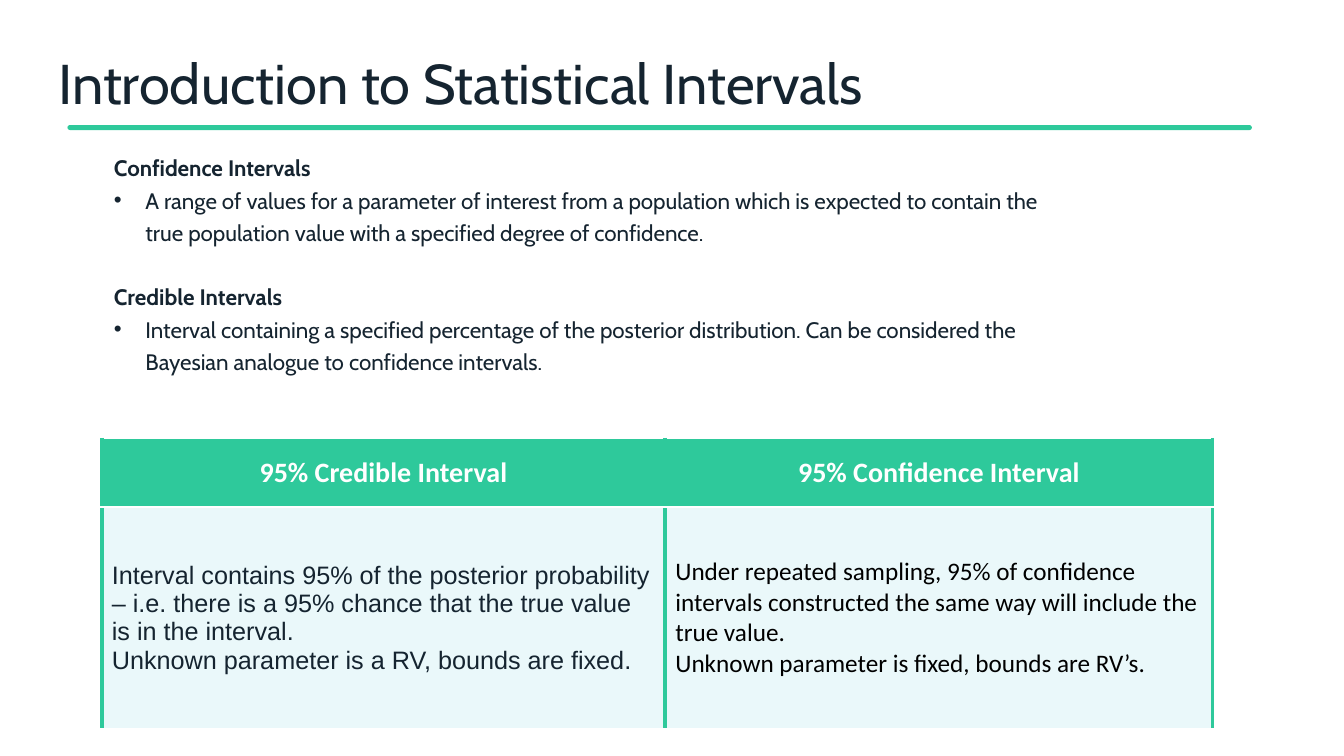
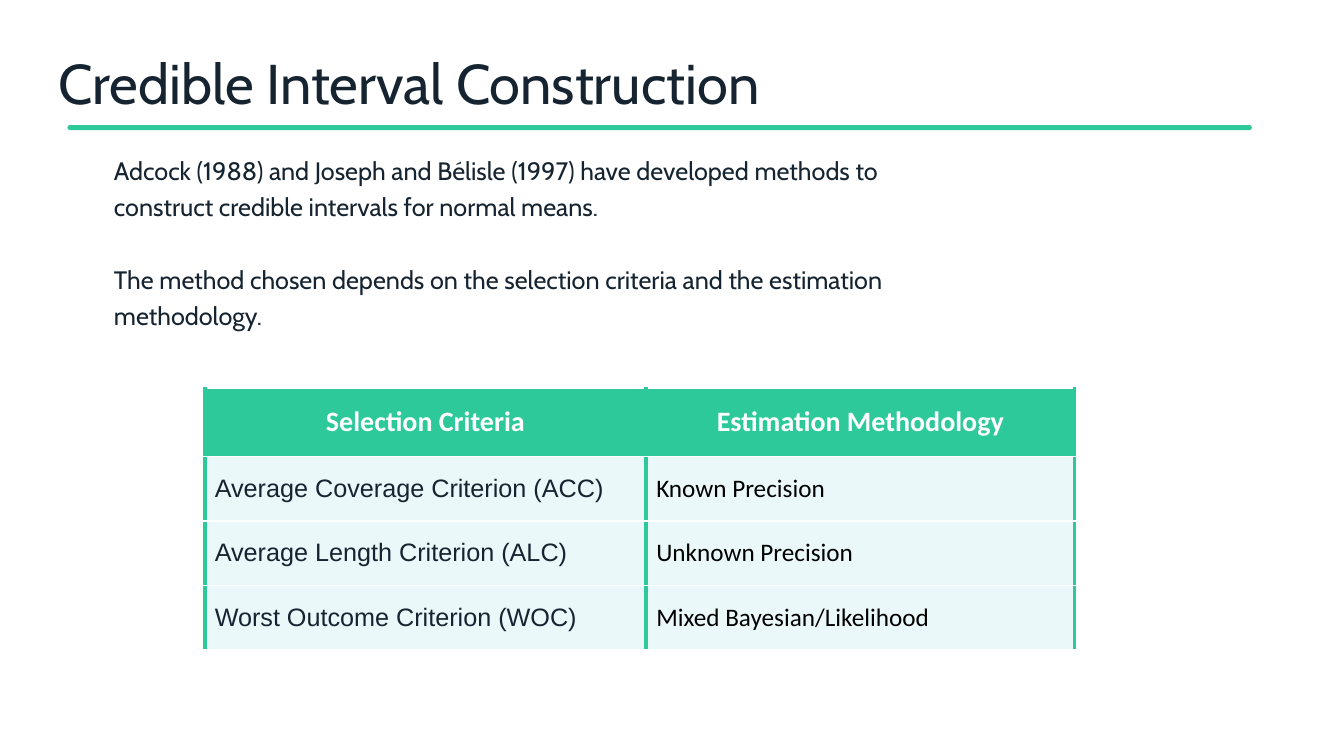
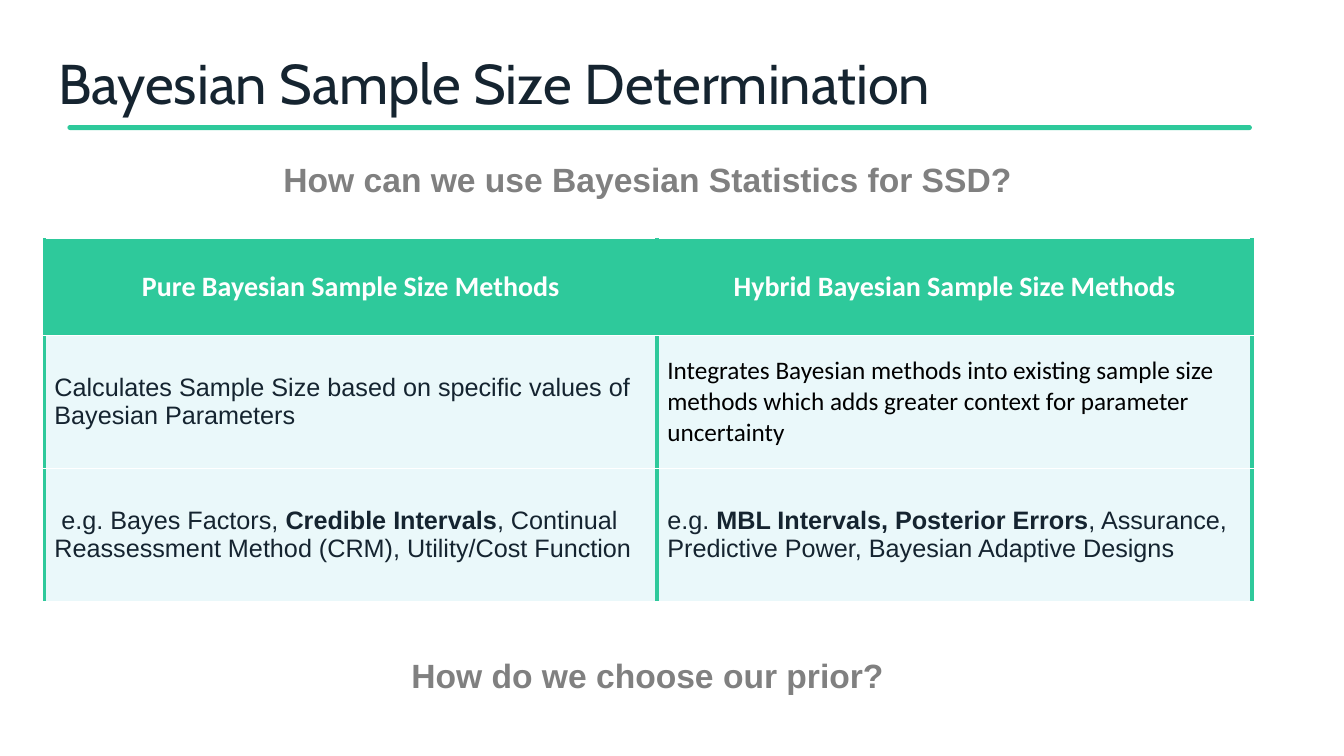
"""Build three slides on Bayesian intervals and sample size determination."""
from lxml import etree
from pptx import Presentation
from pptx.dml.color import RGBColor
from pptx.enum import shapes, text
from pptx.oxml import ns
from pptx.util import Pt

GREEN = RGBColor(0x2E, 0xC9, 0x9B)
PALE = RGBColor(0xD6, 0xF2, 0xF6)
INK = RGBColor(0x15, 0x24, 0x30)
GREY = RGBColor(0x80, 0x80, 0x80)
WHITE = RGBColor(0xFF, 0xFF, 0xFF)
BLACK = RGBColor(0, 0, 0)

CENTER = {"alignment": text.PP_ALIGN.CENTER}
MIDDLE = text.MSO_ANCHOR.MIDDLE
SIDES = ("margin_left", "margin_top", "margin_right", "margin_bottom")
FLUSH = dict.fromkeys(SIDES, 0)
CELL = dict.fromkeys(SIDES, Pt(7.2)) | {"vertical_anchor": MIDDLE}


def style(name, size, color, para, bold=False, left=0, hang=0, bullet=None):
    return {"font": {"name": name, "size": Pt(size), "bold": bold}, "color": color,
            "para": para, "left": left, "hang": hang, "bullet": bullet}


def write(tf, items):
    for i, (st, line) in enumerate(items):
        p = tf.paragraphs[0] if i == 0 else tf.add_paragraph()
        for key, value in st["para"].items():
            setattr(p, key, value)
        pPr = p._p.get_or_add_pPr()
        pPr.set("marL", str(Pt(st["left"])))
        pPr.set("indent", str(Pt(-st["hang"])))
        if st["bullet"]:
            etree.SubElement(pPr, ns.qn("a:buFont")).set("typeface", "Arial")
            etree.SubElement(pPr, ns.qn("a:buChar")).set("char", st["bullet"])
        for j, part in enumerate(line.split("*")):
            r = p.add_run()
            r.text = part
            for key, value in st["font"].items():
                setattr(r.font, key, value)
            r.font.color.rgb = st["color"]
            if j % 2:
                r.font.bold = True


LOOSE = {"line_spacing": 1.2}
TITLE = style("Cabin", 40, INK, {"line_spacing": 0.9})
TERM = style("Cabin", 16, INK, LOOSE, bold=True, left=18)
NEXT_TERM = TERM | {"para": LOOSE | {"space_before": Pt(23)}}
POINT = style("Cabin", 16, INK, LOOSE, left=40.5, hang=22.5, bullet="•")
PLAIN = style("Cabin", 18, INK, LOOSE, left=18)
NEXT_PLAIN = PLAIN | {"para": LOOSE | {"space_before": Pt(26)}}
PROMPT = style("Arial", 24, GREY, CENTER, bold=True)
HEAD = style("Calibri", 20, WHITE, CENTER, bold=True)
ARIAL = style("Arial", 18, INK, {})
CALIBRI = style("Calibri", 18, BLACK, {})

SLIDES = [
    {
        "title": "Introduction to Statistical Intervals",
        "body": [
            (TERM, "Confidence Intervals"),
            (POINT, "A range of values for a parameter of interest from a population which is "
                    "expected to contain the true population value with a specified degree of confidence."),
            (NEXT_TERM, "Credible Intervals"),
            (POINT, "Interval containing a specified percentage of the posterior distribution. "
                    "Can be considered the Bayesian analogue to confidence intervals."),
        ],
        "prompts": [],
        "at": (72.7, 313.2), "cols": (402.5, 391), "rows": (49, 158.4),
        "cells": [
            [[(HEAD, "95% Credible Interval")], [(HEAD, "95% Confidence Interval")]],
            [[(ARIAL, "Interval contains 95% of the posterior probability – i.e. there is a 95% "
                      "chance that the true value is in the interval."),
              (ARIAL, "Unknown parameter is a RV, bounds are fixed.")],
             [(CALIBRI, "Under repeated sampling, 95% of confidence intervals constructed the same "
                        "way will include the true value."),
              (CALIBRI, "Unknown parameter is fixed, bounds are RV’s.")]],
        ],
    },
    {
        "title": "Credible Interval Construction",
        "body": [
            (PLAIN, "Adcock (1988) and Joseph and Bélisle (1997) have developed methods to"),
            (PLAIN, "construct credible intervals for normal means."),
            (NEXT_PLAIN, "The method chosen depends on the selection criteria and the estimation"),
            (PLAIN, "methodology."),
        ],
        "prompts": [],
        "at": (146.2, 277.2), "cols": (315.4, 306), "rows": (49, 46, 46, 46),
        "cells": [
            [[(HEAD, "Selection Criteria")], [(HEAD, "Estimation Methodology")]],
            [[(ARIAL, "Average Coverage Criterion (ACC)")], [(CALIBRI, "Known Precision")]],
            [[(ARIAL, "Average Length Criterion (ALC)")], [(CALIBRI, "Unknown Precision")]],
            [[(ARIAL, "Worst Outcome Criterion (WOC)")], [(CALIBRI, "Mixed Bayesian/Likelihood")]],
        ],
    },
    {
        "title": "Bayesian Sample Size Determination",
        "body": [],
        "prompts": [(110.2, "How can we use Bayesian Statistics for SSD?"),
                    (464.4, "How do we choose our prior?")],
        "at": (31.7, 170.6), "cols": (437.8, 424.8), "rows": (69, 95, 95),
        "cells": [
            [[(HEAD, "Pure Bayesian Sample Size Methods")],
             [(HEAD, "Hybrid Bayesian Sample Size Methods")]],
            [[(ARIAL, "Calculates Sample Size based on specific values of Bayesian Parameters")],
             [(CALIBRI, "Integrates Bayesian methods into existing sample size methods which adds "
                        "greater context for parameter uncertainty")]],
            [[(ARIAL, " e.g. Bayes Factors, *Credible Intervals*, Continual Reassessment Method "
                      "(CRM), Utility/Cost Function")],
             [(ARIAL, "e.g. *MBL Intervals, Posterior Errors*, Assurance, Predictive Power, "
                      "Bayesian Adaptive Designs")]],
        ],
    },
]

BORDERS = [("a:lnL", GREEN, 3), ("a:lnR", GREEN, 3), ("a:lnT", WHITE, 1), ("a:lnB", WHITE, 1)]

prs = Presentation()
prs.slide_width, prs.slide_height = Pt(960), Pt(540)

for data in SLIDES:
    s = prs.slides.add_slide(prs.slide_layouts[6])

    rule = s.shapes.add_shape(shapes.MSO_SHAPE.ROUNDED_RECTANGLE, Pt(48.2), Pt(89.3), Pt(846), Pt(3.6))
    rule.adjustments[0] = 0.5
    rule.shadow.inherit = False
    rule.fill.solid()
    rule.fill.fore_color.rgb = GREEN
    rule.line.fill.background()

    boxes = [((41.8, 27.4, 875.5, 56.2), FLUSH | {"vertical_anchor": text.MSO_ANCHOR.BOTTOM},
              [(TITLE, data["title"])])]
    if data["body"]:
        boxes.append(((63.4, 106.6, 693.4, 390.2), FLUSH, data["body"]))
    for top, question in data["prompts"]:
        boxes.append(((98.6, top, 728, 36), {"auto_size": text.MSO_AUTO_SIZE.SHAPE_TO_FIT_TEXT},
                      [(PROMPT, question)]))
    for at, frame, items in boxes:
        tf = s.shapes.add_textbox(*map(Pt, at)).text_frame
        tf.word_wrap = True
        for key, value in frame.items():
            setattr(tf, key, value)
        write(tf, items)

    size = sum(data["cols"]), sum(data["rows"])
    tbl = s.shapes.add_table(len(data["rows"]), len(data["cols"]), *map(Pt, data["at"] + size)).table
    tbl.horz_banding = False
    for col, width in zip(tbl.columns, data["cols"]):
        col.width = Pt(width)
    for row, height in zip(tbl.rows, data["rows"]):
        row.height = Pt(height)
    for i, row in enumerate(data["cells"]):
        for j, items in enumerate(row):
            cell = tbl.cell(i, j)
            for key, value in CELL.items():
                setattr(cell, key, value)
            write(cell.text_frame, items)
            cell.fill.solid()
            cell.fill.fore_color.rgb = PALE if i else GREEN
            tcPr = cell._tc.get_or_add_tcPr()
            if i:
                clr = tcPr.find(".//" + ns.qn("a:srgbClr"))
                etree.SubElement(clr, ns.qn("a:alpha")).set("val", "49000")
            for k, (tag, color, width) in enumerate(BORDERS):
                ln = etree.Element(ns.qn(tag), w=str(Pt(width)))
                fill = etree.SubElement(ln, ns.qn("a:solidFill"))
                etree.SubElement(fill, ns.qn("a:srgbClr")).set("val", str(color))
                tcPr.insert(k, ln)

prs.save("out.pptx")
